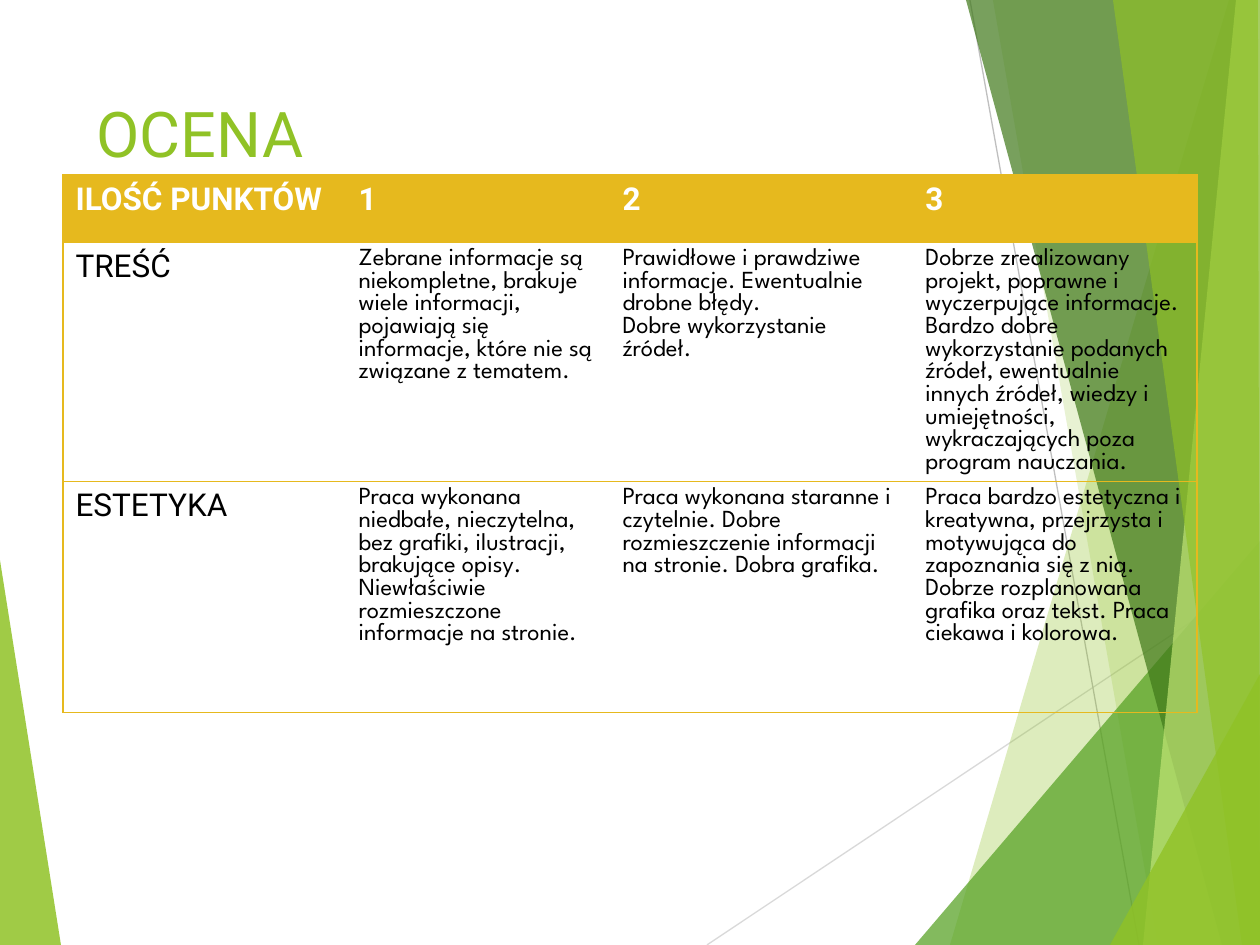
"""Builds the assessment slide: title, scoring table and green facet background."""
from lxml import etree
from pptx import Presentation
from pptx import util as u
from pptx.dml.color import RGBColor
from pptx.enum import shapes, text
from pptx.oxml.ns import qn

PX = 914400 // 126
WIDTH, HEIGHT = 1260, 945
NO_STYLE = "{2D5ABB26-0587-4C30-8999-92F81FD0307C}"
COLORS = {
    "green": "90C226", "leaf": "54A021", "forest": "3F7819", "lime": "C0E474",
    "gold": "E6B91E", "light": "D9D9D9", "grey": "BFBFBF",
    "white": "FFFFFF", "black": "000000",
}

TITLE = "OCENA"
TITLE_BOX = (84, 84, 875, 182)
TABLE_LEFT, TABLE_TOP = 63, 175
COLUMNS = [283, 264, 303, 284]
ROWS = [67, 239, 231]
CELLS = [
    ["ILOŚĆ PUNKTÓW", "1", "2", "3"],
    [
        "TREŚĆ",
        "Zebrane informacje są niekompletne, brakuje wiele informacji, pojawiają się "
        "informacje, które nie są związane z tematem.",
        "Prawidłowe i prawdziwe informacje. Ewentualnie drobne błędy.\n"
        "Dobre wykorzystanie źródeł.",
        "Dobrze zrealizowany projekt, poprawne i wyczerpujące informacje. Bardzo dobre "
        "wykorzystanie podanych źródeł, ewentualnie innych źródeł, wiedzy i umiejętności, "
        "wykraczających poza program nauczania.",
    ],
    [
        "ESTETYKA",
        "Praca wykonana niedbałe, nieczytelna, bez grafiki, ilustracji, brakujące opisy. "
        "Niewłaściwie rozmieszczone informacje na stronie.",
        "Praca wykonana staranne i czytelnie. Dobre rozmieszczenie informacji na stronie. "
        "Dobra grafika.",
        "Praca bardzo estetyczna i kreatywna, przejrzysta i motywująca do zapoznania się z "
        "nią. Dobrze rozplanowana grafika oraz tekst. Praca ciekawa i kolorowa.",
    ],
]

LEFT_FACET = ("green", 85, [(0, 560), (61, HEIGHT), (0, HEIGHT)])
RAYS = [
    ("light", (707, HEIGHT), (WIDTH, 576)),
    ("grey", (970, 0), (1139, HEIGHT)),
]
RIGHT_FACETS = [
    ("green", 30, [(1229, 0), (950, HEIGHT), (WIDTH, HEIGHT), (WIDTH, 0)]),
    ("green", 20, [(993, 0), (1158, HEIGHT), (WIDTH, HEIGHT), (WIDTH, 0)]),
    ("leaf", 72, [(915, HEIGHT), (WIDTH, 541), (WIDTH, HEIGHT)]),
    ("forest", 70, [(966, 0), (1222, HEIGHT), (WIDTH, HEIGHT), (WIDTH, 0)]),
    ("lime", 70, [(1236, 0), (1143, HEIGHT), (WIDTH, HEIGHT), (WIDTH, 0)]),
    ("green", 65, [(1113, 0), (1242, HEIGHT), (WIDTH, HEIGHT), (1258, 0)]),
    ("green", 80, [(1110, HEIGHT), (WIDTH, 674), (WIDTH, HEIGHT)]),
]

FORMATS = {
    "title": {"name": "Roboto", "size": u.Pt(36), "bold": False, "color": "green"},
    "header": {"name": "Roboto", "size": u.Pt(18), "bold": True, "color": "white"},
    "label": {"name": "Roboto", "size": u.Pt(18), "bold": False, "color": "black"},
    "body": {"name": "League Spartan", "size": u.Pt(14), "bold": False, "color": "black"},
}


def rgb(name):
    return RGBColor.from_string(COLORS[name])


def write(frame, content, style):
    frame.text = content
    for para in frame.paragraphs:
        for span in para.runs:
            for key, value in FORMATS[style].items():
                if key == "color":
                    span.font.color.rgb = rgb(value)
                else:
                    setattr(span.font, key, value)


def add_facet(page, color, opacity, points):
    builder = page.shapes.build_freeform(*points[0], scale=PX)
    builder.add_line_segments(points[1:], close=True)
    facet = builder.convert_to_shape()
    facet.shadow.inherit = False
    facet.fill.solid()
    facet.fill.fore_color.rgb = rgb(color)
    facet.line.fill.background()
    tint = next(facet._element.spPr.iter(qn("a:srgbClr")))
    etree.SubElement(tint, qn("a:alpha"), val=str(opacity * 1000))


def add_ray(page, color, start, end):
    ray = page.shapes.add_connector(
        shapes.MSO_CONNECTOR.STRAIGHT, *(value * PX for value in start + end))
    ray.line.color.rgb = rgb(color)
    ray.line.width = u.Pt(0.75)
    etree.SubElement(ray._element.spPr, qn("a:effectLst"))


def add_borders(cell, sides):
    properties = cell._tc.get_or_add_tcPr()
    for index, side in enumerate(sides):
        line = etree.Element(qn(f"a:ln{side}"), w=str(u.Pt(1)))
        fill = etree.SubElement(line, qn("a:solidFill"))
        etree.SubElement(fill, qn("a:srgbClr"), val=COLORS["gold"])
        properties.insert(index, line)


def add_scores(page):
    frame = page.shapes.add_table(
        len(ROWS), len(COLUMNS), TABLE_LEFT * PX, TABLE_TOP * PX,
        sum(COLUMNS) * PX, sum(ROWS) * PX)
    table = frame.table
    table.horz_banding = False
    table._tbl.tblPr.find(qn("a:tableStyleId")).text = NO_STYLE
    for column, width in zip(table.columns, COLUMNS):
        column.width = width * PX
    for row, height in zip(table.rows, ROWS):
        row.height = height * PX
    for r, contents in enumerate(CELLS):
        for c, content in enumerate(contents):
            cell = table.cell(r, c)
            style = "header" if r == 0 else "label" if c == 0 else "body"
            write(cell.text_frame, content, style)
            if r == 0:
                cell.fill.solid()
                cell.fill.fore_color.rgb = rgb("gold")
            else:
                cell.fill.background()
            left = "L" if c == 0 else ""
            right = "R" if c == len(COLUMNS) - 1 else ""
            add_borders(cell, left + right + "TB")


def place_title(page):
    title = page.shapes.title
    for key, value in zip(("left", "top", "width", "height"), TITLE_BOX):
        setattr(title, key, value * PX)
    frame = title.text_frame
    write(frame, TITLE, "title")
    settings = {"vertical_anchor": text.MSO_ANCHOR.TOP, "word_wrap": True,
                "auto_size": text.MSO_AUTO_SIZE.NONE, "margin_top": 10 * PX}
    for key, value in settings.items():
        setattr(frame, key, value)
    frame.paragraphs[0].alignment = text.PP_ALIGN.LEFT


def main():
    deck = Presentation()
    deck.slide_width, deck.slide_height = WIDTH * PX, HEIGHT * PX
    page = deck.slides.add_slide(deck.slide_layouts[5])
    place_title(page)
    add_facet(page, *LEFT_FACET)
    for ray in RAYS:
        add_ray(page, *ray)
    for facet in RIGHT_FACETS:
        add_facet(page, *facet)
    add_scores(page)
    deck.save("out.pptx")


if __name__ == "__main__":
    main()
